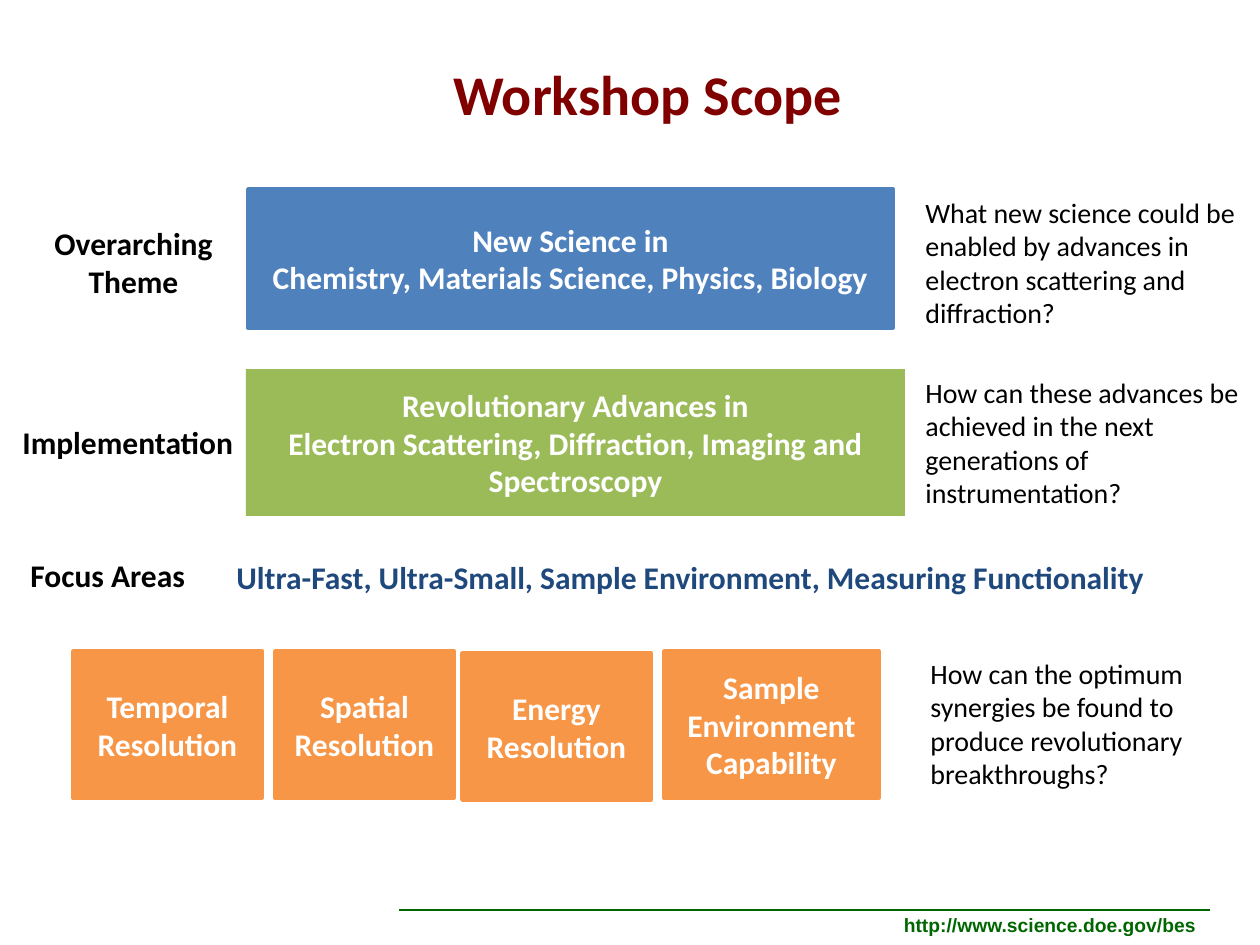
from lxml.etree import SubElement
from pptx import Presentation
from pptx.dml.color import RGBColor
from pptx.enum.shapes import MSO_CONNECTOR, MSO_SHAPE
from pptx.enum.text import MSO_ANCHOR, MSO_AUTO_SIZE, PP_ALIGN
from pptx.oxml.ns import qn
from pptx.util import Emu, Pt

SCALE = 914400 / 126
BLUE, LIME, AMBER, GREEN = "4F81BD", "9BBB59", "F79646", "006600"
LABELS = [
    ("Overarching Theme", (30, 218, 207, 89), True, PP_ALIGN.CENTER),
    ("Implementation", (10, 417, 249, 50), True, PP_ALIGN.LEFT),
    ("Focus Areas", (18, 550, 181, 50), False, PP_ALIGN.LEFT),
]
ASKS = [
    ("What new science could be enabled by advances in electron scattering and diffraction?",
     (913, 189, 357, 149)),
    ("How can these advances be achieved in the next generations of instrumentation?",
     (913, 369, 362, 149)),
    ("How can the optimum synergies be found to produce revolutionary breakthroughs?",
     (918, 650, 320, 149)),
]
AREAS = [
    ("Temporal\nResolution", 73, 651, 189),
    ("Spatial Resolution", 275, 651, 179),
    ("Energy Resolution", 462, 653, 189),
    ("Sample Environment Capability", 664, 651, 215),
]


def px(num):
    """Turn pixels into EMU."""
    return Emu(round(num * SCALE))


def tint(code):
    """Turn a hex string into a colour."""
    return RGBColor.from_string(code)


def write(frame, text, size=18, color="000000", bold=True, face="Calibri",
          align=PP_ALIGN.LEFT, wrap=True):
    """Fill a text frame with one paragraph per line."""
    frame.word_wrap = wrap
    frame.text = text
    for para in frame.paragraphs:
        para.alignment = align
        font = para.font
        font.name, font.size, font.bold = face, Pt(size), bold
        font.color.rgb = tint(color)


def note(slide, text, at, **style):
    """Add a text box that grows with its text."""
    frame = slide.shapes.add_textbox(*map(px, at)).text_frame
    write(frame, text, **style)
    frame.auto_size = MSO_AUTO_SIZE.SHAPE_TO_FIT_TEXT


def block(slide, text, at, fill, edge=True):
    """Add a filled rectangle with centred white text."""
    shape = slide.shapes.add_shape(MSO_SHAPE.RECTANGLE, *map(px, at))
    shape.shadow.inherit = False
    shape.fill.solid()
    shape.fill.fore_color.rgb = tint(fill)
    if edge:
        shape.line.color.rgb = tint(fill)
        shape.line.width = Pt(2)
    else:
        shape.line.fill.background()
    shape.text_frame.vertical_anchor = MSO_ANCHOR.MIDDLE
    write(shape.text_frame, text, color="FFFFFF", align=PP_ALIGN.CENTER)


def rule(slide, left, right, top, color):
    """Add a plain horizontal line."""
    line = slide.shapes.add_connector(
        MSO_CONNECTOR.STRAIGHT, px(left), px(top), px(right), px(top))
    line.line.color.rgb = tint(color)
    line.line.width = Pt(1.5)
    SubElement(line._element.spPr, qn("a:effectLst"))


def main():
    """Build the slide and save it."""
    deck = Presentation()
    deck.slide_width, deck.slide_height = px(1260), px(945)
    slide = deck.slides.add_slide(deck.slide_layouts[6])
    rule(slide, 399, 1210, 910, GREEN)
    note(slide, "http://www.science.doe.gov/bes", (890, 907, 320, 37), size=11,
         color=GREEN, face="Arial", align=PP_ALIGN.CENTER, wrap=False)
    note(slide, "Workshop Scope", (441, 53, 417, 81), size=32, color="800000", wrap=False)
    block(slide, "New Science in\nChemistry, Materials Science, Physics, Biology",
          (248, 189, 645, 139), BLUE)
    block(slide, "Revolutionary Advances in\n"
          "Electron Scattering, Diffraction, Imaging and Spectroscopy",
          (246, 369, 659, 147), LIME, edge=False)
    for text, at, wrap, align in LABELS:
        note(slide, text, at, wrap=wrap, align=align)
    note(slide, "Ultra-Fast, Ultra-Small, Sample Environment, Measuring Functionality",
         (224, 552, 940, 50), color="1F497D", wrap=False)
    for text, left, top, width in AREAS:
        block(slide, text, (left, top, width, 147), AMBER)
    for text, at in ASKS:
        note(slide, text, at, size=16, bold=False)
    deck.save("out.pptx")


if __name__ == "__main__":
    main()
